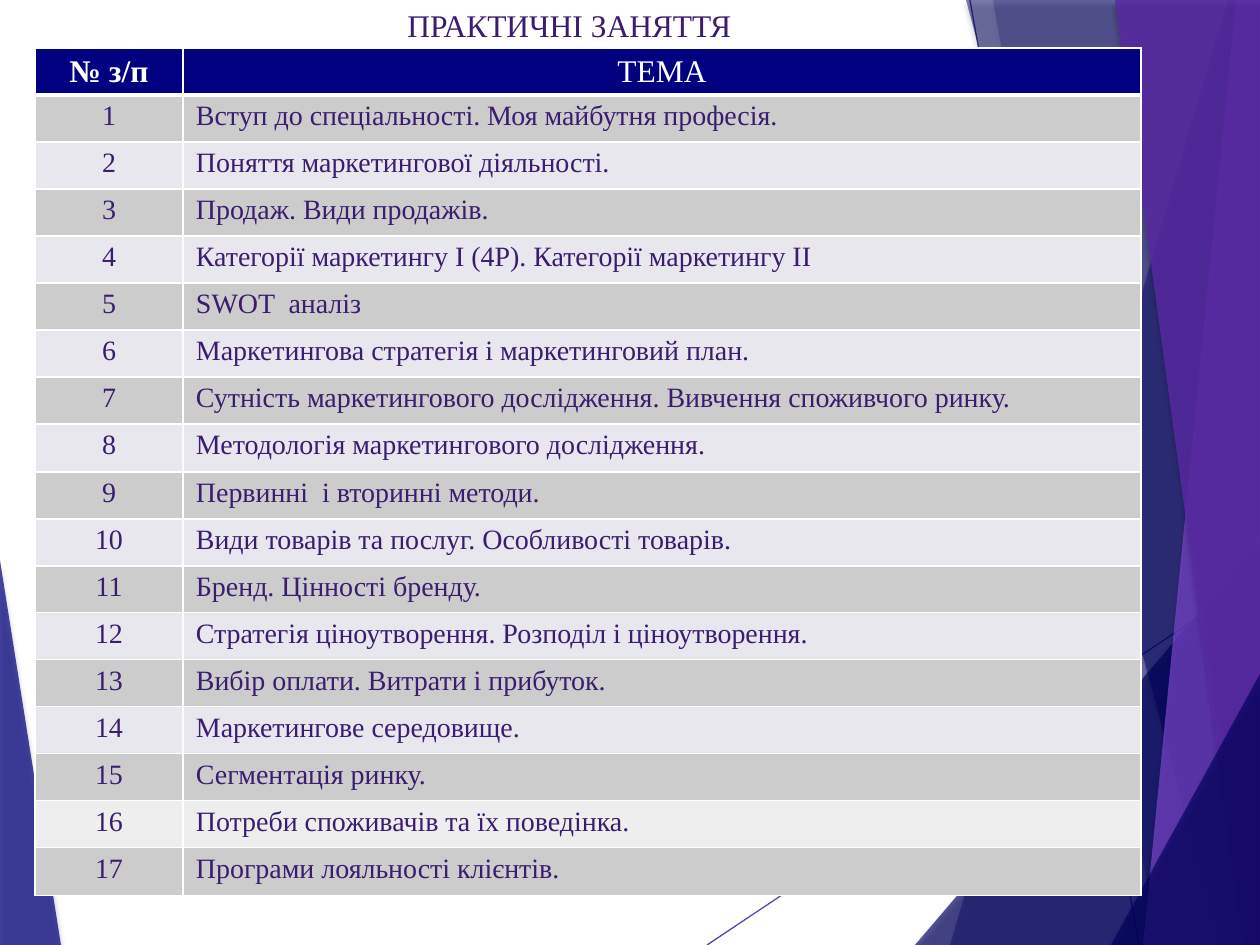
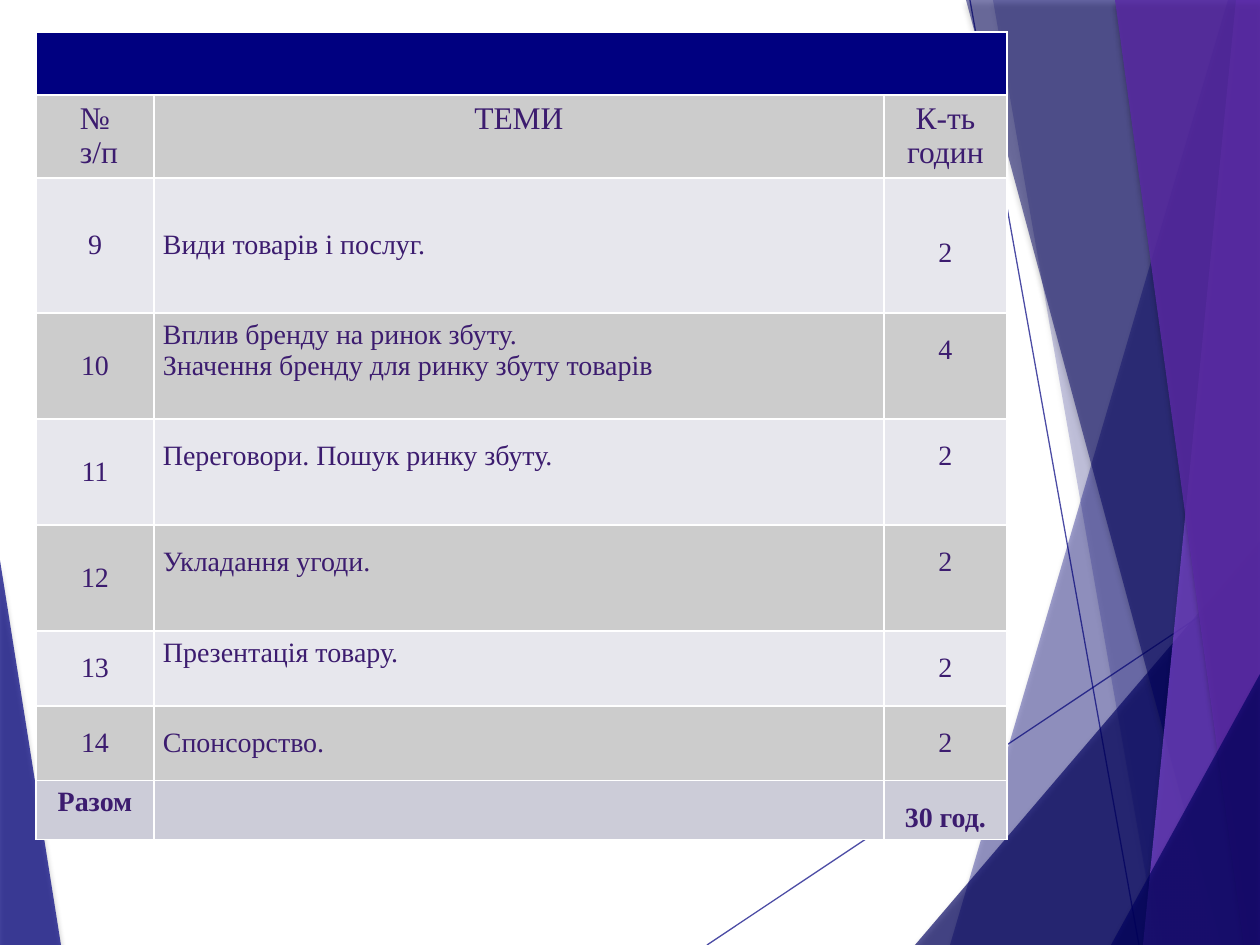
"""Build two slides listing marketing topics over a shared purple backdrop."""
from lxml import etree
from pptx import Presentation
from pptx.dml.color import RGBColor
from pptx.enum.shapes import MSO_CONNECTOR
from pptx.enum.text import MSO_ANCHOR, PP_ALIGN
from pptx.oxml.ns import qn
from pptx.util import Emu, Pt

PX = 914400 / 126
WIDTH, HEIGHT = 1260, 945
FONT = "Times New Roman"
LEFT, CENTER = PP_ALIGN.LEFT, PP_ALIGN.CENTER
TOP, MIDDLE = MSO_ANCHOR.TOP, MSO_ANCHOR.MIDDLE
STRAIGHT = MSO_CONNECTOR.STRAIGHT

WHITE = RGBColor(0xFF, 0xFF, 0xFF)
NAVY = RGBColor(0x00, 0x00, 0x80)
DEEP_NAVY = RGBColor(0x00, 0x00, 0x60)
VIOLET = RGBColor(0x7B, 0x46, 0xD0)
PURPLE = RGBColor(0x5A, 0x2A, 0xA6)
INK = RGBColor(0x3C, 0x1C, 0x6F)
GREY = RGBColor(0xCC, 0xCC, 0xCC)
PALE = RGBColor(0xE7, 0xE7, 0xED)
PALEST = RGBColor(0xEE, 0xEE, 0xEE)
LILAC = RGBColor(0xCC, 0xCC, 0xD8)

RIGHT_CORNERS = [(WIDTH, HEIGHT), (WIDTH, 0)]
BACKDROP_LINES = [(707, 945, 1260, 576), (970, 0, 1139, 945)]
BACKDROP_FACETS = [
    ([(0, 560), (61, 945), (0, 945)], NAVY, 70),
    ([(1228, 0), (950, 945), *RIGHT_CORNERS], NAVY, 36),
    ([(993, 0), (1158, 945), *RIGHT_CORNERS], NAVY, 20),
    ([(915, 945), (1260, 541), (1260, 945)], DEEP_NAVY, 66),
    ([(966, 0), (1221, 945), *RIGHT_CORNERS], DEEP_NAVY, 50),
    ([(1236, 0), (1143, 945), *RIGHT_CORNERS], VIOLET, 70),
    ([(1115, 0), (1244, 945), *RIGHT_CORNERS], PURPLE, 82),
    ([(1111, 945), (1260, 674), (1260, 945)], DEEP_NAVY, 66),
]

PRACTICE_TOPICS = [
    "Вступ до спеціальності. Моя майбутня професія.",
    "Поняття маркетингової діяльності.",
    "Продаж. Види продажів.",
    "Категорії маркетингу І (4Р). Категорії маркетингу ІІ",
    "SWOT  аналіз",
    "Маркетингова стратегія і маркетинговий план.",
    "Сутність маркетингового дослідження. Вивчення споживчого ринку.",
    "Методологія маркетингового дослідження.",
    "Первинні  і вторинні методи.",
    "Види товарів та послуг. Особливості товарів.",
    "Бренд. Цінності бренду.",
    "Стратегія ціноутворення. Розподіл і ціноутворення.",
    "Вибір оплати. Витрати і прибуток.",
    "Маркетингове середовище.",
    "Сегментація ринку.",
    "Потреби споживачів та їх поведінка.",
    "Програми лояльності клієнтів.",
]
HOURS_TOPICS = [
    (9, "Види товарів і послуг.", 2, 135, 6),
    (10, "Вплив бренду на ринок збуту.\nЗначення бренду для ринку збуту товарів", 4, 106, 37),
    (11, "Переговори. Пошук ринку збуту.", 2, 106, 37),
    (12, "Укладання угоди.", 2, 106, 37),
    (13, "Презентація товару.", 2, 75, 37),
    (14, "Спонсорство.", 2, 75, 6),
]


def write(target, text, size=16, color=INK, bold=False, align=CENTER, anchor=TOP,
          side=13, bottom=6, spacing=None):
    """Fill a text frame or a table cell with one paragraph per line of text."""
    target.margin_left = target.margin_right = Emu(round(side * PX))
    target.margin_top = Emu(round(6 * PX))
    target.margin_bottom = Emu(round(bottom * PX))
    target.vertical_anchor = anchor
    frame = getattr(target, "text_frame", target)
    frame.word_wrap = True
    for index, line in enumerate(text.split("\n")):
        para = frame.add_paragraph() if index else frame.paragraphs[0]
        para.alignment = align
        if spacing:
            para.line_spacing = spacing
        span = para.add_run()
        span.text = line
        span.font.name, span.font.size = FONT, Pt(size)
        span.font.bold, span.font.color.rgb = bold, color


def finish(shape, opacity, shadow):
    """Make a shape translucent and give it a soft shadow or none."""
    properties = shape._element.spPr
    for color in list(properties.iter(qn("a:srgbClr"))):
        etree.SubElement(color, qn("a:alpha"), val=str(opacity * 1000))
    effects = etree.SubElement(properties, qn("a:effectLst"))
    if shadow:
        outer = etree.SubElement(effects, qn("a:outerShdw"), blurRad=str(Pt(3)),
                                 dist=str(Pt(2)), dir="5400000", rotWithShape="0")
        black = etree.SubElement(outer, qn("a:srgbClr"), val="000000")
        etree.SubElement(black, qn("a:alpha"), val="35000")


practice_edges = [848 * index // 18 for index in range(19)]
practice_heights = [end - start for start, end in zip(practice_edges, practice_edges[1:])]
heading = dict(size=18, color=WHITE)
practice_rows = [(NAVY, practice_heights[0],
                  [("№ з/п", dict(heading, bold=True)), ("ТЕМА", heading)])]
for number, topic in enumerate(PRACTICE_TOPICS, 1):
    band = GREY if number % 2 else PALEST if number == 16 else PALE
    practice_rows.append((band, practice_heights[number],
                          [(str(number), {}), (topic, dict(align=LEFT))]))

heading = dict(size=18)
hours_rows = [
    (NAVY, 63, [("", {})] * 3),
    (GREY, 83, [("№\n з/п", heading), ("ТЕМИ", heading), ("К-ть годин", heading)]),
]
for number, topic, hours, height, bottom in HOURS_TOPICS:
    hours_rows.append((PALE if number % 2 else GREY, height, [
        (str(number), dict(anchor=MIDDLE)),
        (topic, dict(align=LEFT, anchor=MIDDLE, side=9, bottom=bottom)),
        (str(hours), dict(anchor=MIDDLE if number == 9 else TOP, side=9, spacing=1.5)),
    ]))
hours_rows.append((LILAC, 59, [
    ("Разом", dict(bold=True)), ("", {}), ("30 год.", dict(bold=True, side=9, spacing=1.5))]))

PAGES = [
    ("ПРАКТИЧНІ ЗАНЯТТЯ", 35, 48, [148, 958], practice_rows, 3),
    (None, 36, 32, [118, 730, 123], hours_rows, 0.96),
]

deck = Presentation()
deck.slide_width, deck.slide_height = Emu(round(WIDTH * PX)), Emu(round(HEIGHT * PX))

for title, left, top, widths, rows, heading_rule in PAGES:
    page = deck.slides.add_slide(deck.slide_layouts[6])

    for index, (points, color, opacity) in enumerate(BACKDROP_FACETS):
        builder = page.shapes.build_freeform(*points[0], scale=PX)
        builder.add_line_segments(points[1:], close=True)
        facet = builder.convert_to_shape()
        facet.fill.solid()
        facet.fill.fore_color.rgb = color
        facet.line.fill.background()
        finish(facet, opacity, shadow=True)
        if index == 0:
            for ends in BACKDROP_LINES:
                line = page.shapes.add_connector(STRAIGHT, *[Emu(round(end * PX)) for end in ends])
                line.line.color.rgb = NAVY
                line.line.width = Pt(0.75)
                finish(line, 70, shadow=False)

    area = [left, top, sum(widths), sum(height for _, height, _ in rows)]
    table = page.shapes.add_table(len(rows), len(widths),
                                  *[Emu(round(length * PX)) for length in area]).table
    table.first_row = table.horz_banding = False
    for column, width in zip(table.columns, widths):
        column.width = Emu(round(width * PX))
    for row_index, (band, height, cells) in enumerate(rows):
        table.rows[row_index].height = Emu(round(height * PX))
        for column_index, (text, style) in enumerate(cells):
            cell = table.cell(row_index, column_index)
            if text:
                write(cell, text, **style)
            cell.fill.solid()
            cell.fill.fore_color.rgb = band
            borders = cell._tc.get_or_add_tcPr()
            for position, side in enumerate(["lnL", "lnR", "lnT", "lnB"]):
                under_heading = (row_index, side) in [(0, "lnB"), (1, "lnT")]
                weight = Pt(heading_rule if under_heading else 0.96)
                border = etree.Element(qn(f"a:{side}"), w=str(weight))
                paint = etree.SubElement(border, qn("a:solidFill"))
                etree.SubElement(paint, qn("a:srgbClr"), val=str(WHITE))
                borders.insert(position, border)

    if title:
        box = page.shapes.add_textbox(*[Emu(round(length * PX)) for length in (253, 0, 633, 47)])
        write(box.text_frame, title, size=18)
    else:
        table.cell(0, 0).merge(table.cell(0, len(widths) - 1))

deck.save("out.pptx")
